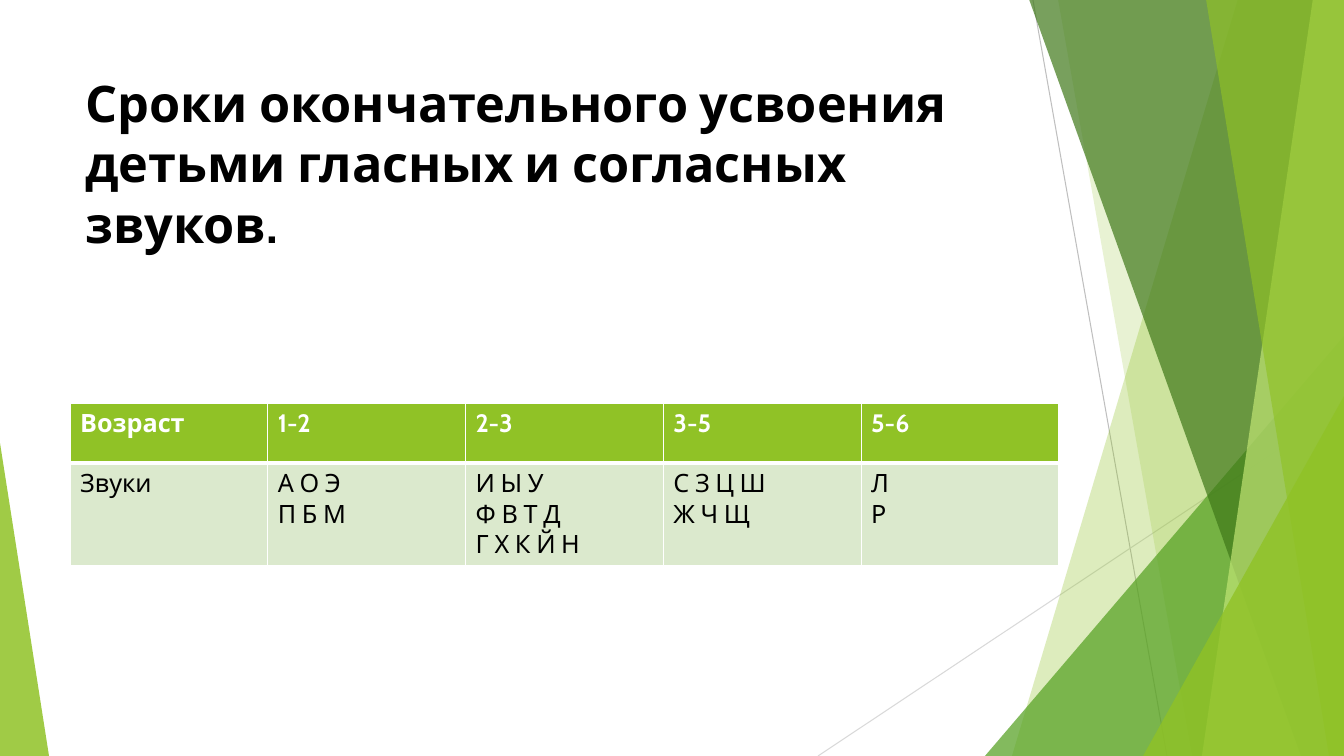
from lxml import etree
from pptx import Presentation
from pptx.dml.color import RGBColor
from pptx.enum.shapes import MSO_CONNECTOR, MSO_SHAPE
from pptx.enum.text import MSO_ANCHOR, MSO_AUTO_SIZE, PP_ALIGN
from pptx.oxml.ns import qn
from pptx.util import Pt

STRAIGHT = MSO_CONNECTOR.STRAIGHT
TRIANGLE = MSO_SHAPE.ISOSCELES_TRIANGLE
TOP, LEFT, NO_AUTOFIT = MSO_ANCHOR.TOP, PP_ALIGN.LEFT, MSO_AUTO_SIZE.NONE

PX = 12192000 / 1344  # EMU per px
SLIDE_W, SLIDE_H = 1344, 756
FONT = "Cabin"

BLACK = RGBColor(0x00, 0x00, 0x00)
WHITE = RGBColor(0xFF, 0xFF, 0xFF)
GREEN = RGBColor(0x90, 0xC2, 0x26)
MID_GREEN = RGBColor(0x54, 0xA0, 0x21)
DARK_GREEN = RGBColor(0x3F, 0x78, 0x19)
LIGHT_GREEN = RGBColor(0xC0, 0xE4, 0x74)
PALE_GREEN = RGBColor(0xDB, 0xE9, 0xCD)
GREY = RGBColor(0xBF, 0xBF, 0xBF)
LIGHT_GREY = RGBColor(0xD9, 0xD9, 0xD9)

TITLE = "Сроки окончательного усвоения детьми гласных и согласных звуков."
SOUNDS_BY_AGE = [
    ("Возраст", ["Звуки"]),
    ("1-2", ["А О Э", "П Б М"]),
    ("2-3", ["И Ы У", "Ф В Т Д", "Г Х К Й Н"]),
    ("3-5", ["С З Ц Ш", "Ж Ч Щ"]),
    ("5-6", ["Л", "Р"]),
]


def px(*lengths):
    return [round(length * PX) for length in lengths]


def add_run(paragraph, text, size, color, bold):
    run = paragraph.add_run()
    run.text = text
    run.font.name = FONT
    run.font.size = Pt(size)
    run.font.bold = bold
    run.font.color.rgb = color


def tint(shape, color, opacity):
    """Flat, partly transparent fill without outline or shadow."""
    shape.shadow.inherit = False
    shape.line.fill.background()
    shape.fill.solid()
    shape.fill.fore_color.rgb = color
    srgb = shape.fill._xPr.find(".//" + qn("a:srgbClr"))
    etree.SubElement(srgb, qn("a:alpha"), val=str(opacity * 1000))


def add_ray(slide, start, end, color):
    ray = slide.shapes.add_connector(STRAIGHT, *px(*start, *end))
    ray.line.color.rgb = color
    ray.line.width = Pt(0.75)
    etree.SubElement(ray._element.spPr, qn("a:effectLst"))


def add_pane(slide, top_x, bottom_x, color, opacity):
    """Full-height pane with a slanted left edge, ending at the slide's right."""
    builder = slide.shapes.build_freeform(top_x, -1, scale=PX)
    builder.add_line_segments(
        [(SLIDE_W, -1), (SLIDE_W, SLIDE_H), (bottom_x, SLIDE_H)], close=True)
    tint(builder.convert_to_shape(), color, opacity)


def add_corner(slide, left, width, height, peak, color, opacity):
    """Right-angled triangle on the bottom edge; peak 0 is left, 1 is right."""
    corner = slide.shapes.add_shape(
        TRIANGLE, *px(left, SLIDE_H - height, width, height))
    corner.adjustments[0] = peak
    tint(corner, color, opacity)


def add_decoration(slide):
    add_ray(slide, (1033, 0), (1167, SLIDE_H), GREY)
    add_ray(slide, (SLIDE_W, 406), (818, SLIDE_H), LIGHT_GREY)
    add_pane(slide, 1238, 1012, GREEN, 30)
    add_pane(slide, 1058, 1192, GREEN, 20)
    add_corner(slide, 985, 359, 420, 1, MID_GREEN, 72)
    add_pane(slide, 1029, 1301, DARK_GREEN, 70)
    add_pane(slide, 1313, 1202, LIGHT_GREEN, 70)
    add_pane(slide, 1206, 1329, GREEN, 65)
    add_corner(slide, 1143, 201, 360, 1, GREEN, 80)
    add_corner(slide, 0, 49, 313, 0, GREEN, 85)


def add_title(slide, left, top, width, height):
    title = slide.shapes.title
    title.left, title.top, title.width, title.height = px(left, top, width, height)
    frame = title.text_frame
    frame.word_wrap = True
    frame.auto_size = NO_AUTOFIT
    frame.vertical_anchor = TOP
    frame.paragraphs[0].alignment = LEFT
    add_run(frame.paragraphs[0], TITLE, 36, BLACK, True)


def fill_cell(cell, lines, color, bold, background, borders):
    properties = cell._tc.get_or_add_tcPr()
    for side, points in borders.items():
        line = etree.SubElement(properties, qn("a:ln" + side), w=str(Pt(points)))
        solid = etree.SubElement(line, qn("a:solidFill"))
        etree.SubElement(solid, qn("a:srgbClr"), val=str(WHITE))
    cell.fill.solid()
    cell.fill.fore_color.rgb = background
    frame = cell.text_frame
    for index, text in enumerate(lines):
        paragraph = frame.add_paragraph() if index else frame.paragraphs[0]
        add_run(paragraph, text, 18, color, bold)


def add_sounds_table(slide, left, top, width, header_height, body_height):
    table = slide.shapes.add_table(
        2, len(SOUNDS_BY_AGE),
        *px(left, top, width, header_height + body_height)).table
    table.rows[0].height, table.rows[1].height = px(header_height, body_height)
    for column, (age, sounds) in enumerate(SOUNDS_BY_AGE):
        fill_cell(table.cell(0, column), [age], WHITE, True, GREEN,
                  {"L": 1, "R": 1, "T": 1, "B": 3})
        fill_cell(table.cell(1, column), sounds, BLACK, False, PALE_GREEN,
                  {"L": 1, "R": 1, "T": 3, "B": 1})


def main():
    presentation = Presentation()
    presentation.slide_width, presentation.slide_height = px(SLIDE_W, SLIDE_H)
    slide = presentation.slides.add_slide(presentation.slide_layouts[5])
    add_decoration(slide)
    add_title(slide, 75, 67, 947, 145)
    add_sounds_table(slide, 70, 403, 989, 60, 102)
    presentation.save("out.pptx")


if __name__ == "__main__":
    main()
